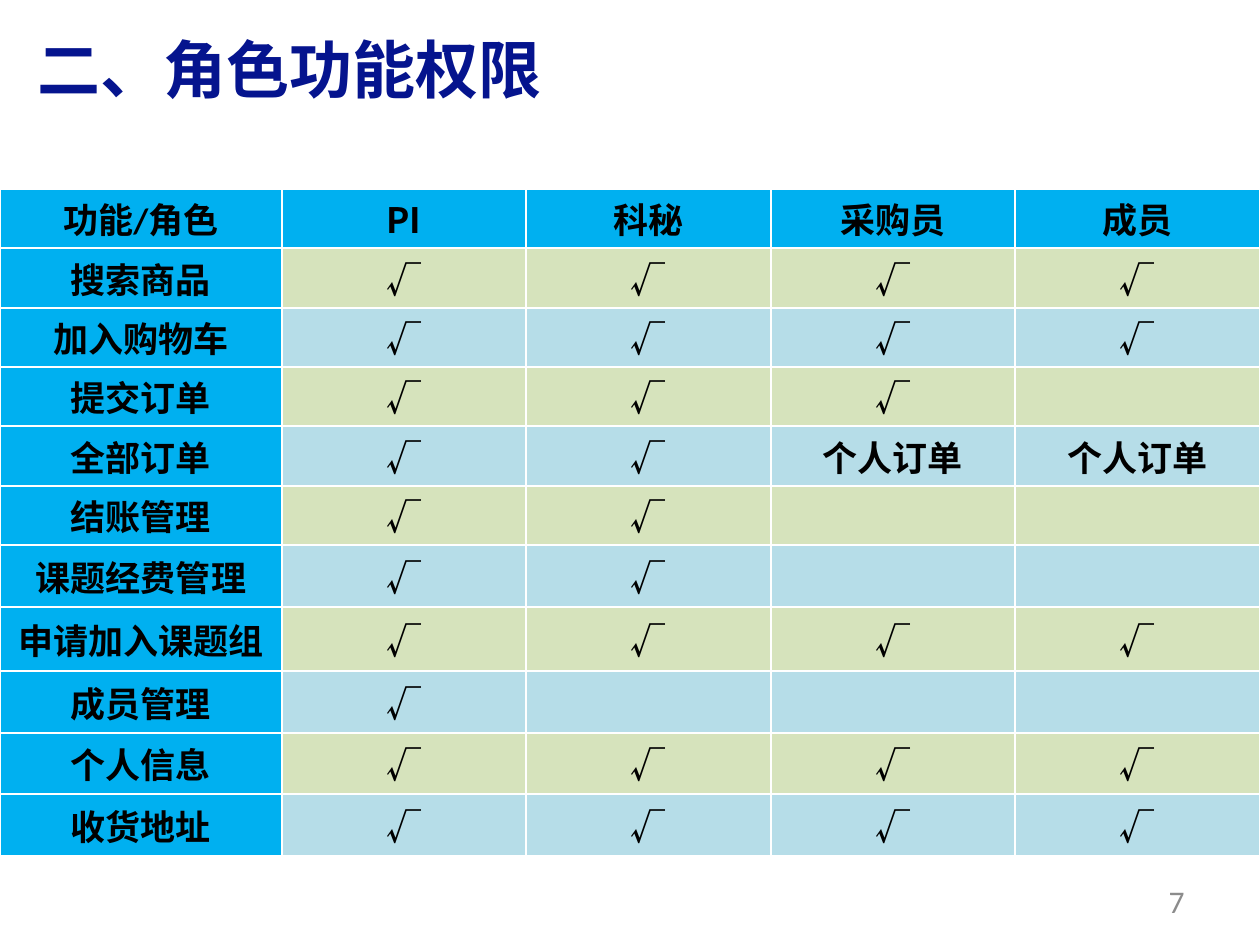
from lxml import etree
from pptx import Presentation, util as u
from pptx.dml.color import RGBColor
from pptx.enum import text
from pptx.oxml import ns

PX = u.Inches(1) // 126
NAVY = RGBColor(0x05, 0x14, 0x8E)
BLACK = RGBColor(0, 0, 0)
GRAY = RGBColor(0x8C, 0x8C, 0x8C)
WHITE = RGBColor(0xFF, 0xFF, 0xFF)
HEADER_BLUE = RGBColor(0x00, 0xB0, 0xF0)
BANDS = [RGBColor(0xB6, 0xDD, 0xE8), RGBColor(0xD6, 0xE3, 0xBC)]
LATIN, CJK = "Calibri", "Noto Sans CJK SC"

TITLE = "二、角色功能权限"
PAGE_NUMBER = "7"
YES, NO, OWN = "√", "", "个人订单"
PERMISSIONS = [
    ("功能/角色", "PI", "科秘", "采购员", "成员"),
    ("搜索商品", YES, YES, YES, YES),
    ("加入购物车", YES, YES, YES, YES),
    ("提交订单", YES, YES, YES, NO),
    ("全部订单", YES, YES, OWN, OWN),
    ("结账管理", YES, YES, NO, NO),
    ("课题经费管理", YES, YES, NO, NO),
    ("申请加入课题组", YES, YES, YES, YES),
    ("成员管理", YES, NO, NO, NO),
    ("个人信息", YES, YES, YES, YES),
    ("收货地址", YES, YES, YES, YES),
]
COLUMN_WIDTHS = [282, 244, 245, 244, 245]
ROW_HEIGHTS = [59, 60, 59, 59, 60, 59, 62, 64, 62, 61, 62]
TABLE_TOP = 189


def px(*lengths):
    return [length * PX for length in lengths]


def write(paragraph, words, size, font, color, bold=False):
    paragraph.text = words
    for run in paragraph.runs:
        run.font.size = u.Pt(size)
        run.font.name = font
        run.font.bold = bold
        run.font.color.rgb = color
        east_asian = etree.SubElement(run.font._element, ns.qn("a:ea"))
        east_asian.set("typeface", CJK)


def add_text(slide, box, words, size, font, color, bold=False):
    frame = slide.shapes.add_textbox(*px(*box)).text_frame
    frame.word_wrap = True
    write(frame.paragraphs[0], words, size, font, color, bold)
    return frame


def add_borders(cell, color, points):
    """Draw all four cell edges; they must precede the fill in the XML."""
    properties = cell._tc.get_or_add_tcPr()
    for index, edge in enumerate(("lnL", "lnR", "lnT", "lnB")):
        line = etree.Element(ns.qn(f"a:{edge}"), w=str(u.Pt(points)))
        fill = etree.SubElement(line, ns.qn("a:solidFill"))
        etree.SubElement(fill, ns.qn("a:srgbClr"), val=str(color))
        properties.insert(index, line)


def add_permission_table(slide):
    box = px(0, TABLE_TOP, sum(COLUMN_WIDTHS), sum(ROW_HEIGHTS))
    table = slide.shapes.add_table(len(ROW_HEIGHTS), len(COLUMN_WIDTHS), *box).table
    for column, width in zip(table.columns, COLUMN_WIDTHS):
        column.width = width * PX
    for row, height in zip(table.rows, ROW_HEIGHTS):
        row.height = height * PX
    for r, entries in enumerate(PERMISSIONS):
        for c, words in enumerate(entries):
            cell = table.cell(r, c)
            cell.fill.solid()
            cell.fill.fore_color.rgb = HEADER_BLUE if r == 0 or c == 0 else BANDS[r % 2]
            add_borders(cell, WHITE, 1.5)
            cell.vertical_anchor = text.MSO_ANCHOR.MIDDLE
            cell.margin_left = cell.margin_right = 9 * PX
            cell.margin_top = cell.margin_bottom = 0
            paragraph = cell.text_frame.paragraphs[0]
            paragraph.alignment = text.PP_ALIGN.CENTER
            font = CJK if words in (YES, "PI") else LATIN
            write(paragraph, words, 20, font, BLACK, bold=True)


def main():
    presentation = Presentation()
    presentation.slide_width, presentation.slide_height = px(1260, 945)
    slide = presentation.slides.add_slide(presentation.slide_layouts[6])

    title = add_text(slide, (25, 39, 703, 69), TITLE, 36, CJK, NAVY, bold=True)
    title.margin_top = title.margin_bottom = 0
    title.paragraphs[0].line_spacing = 0.9

    add_permission_table(slide)

    number = add_text(slide, (903, 876, 294, 50), PAGE_NUMBER, 18, LATIN, GRAY)
    number.vertical_anchor = text.MSO_ANCHOR.MIDDLE
    number.paragraphs[0].alignment = text.PP_ALIGN.RIGHT

    presentation.save("out.pptx")


if __name__ == "__main__":
    main()
